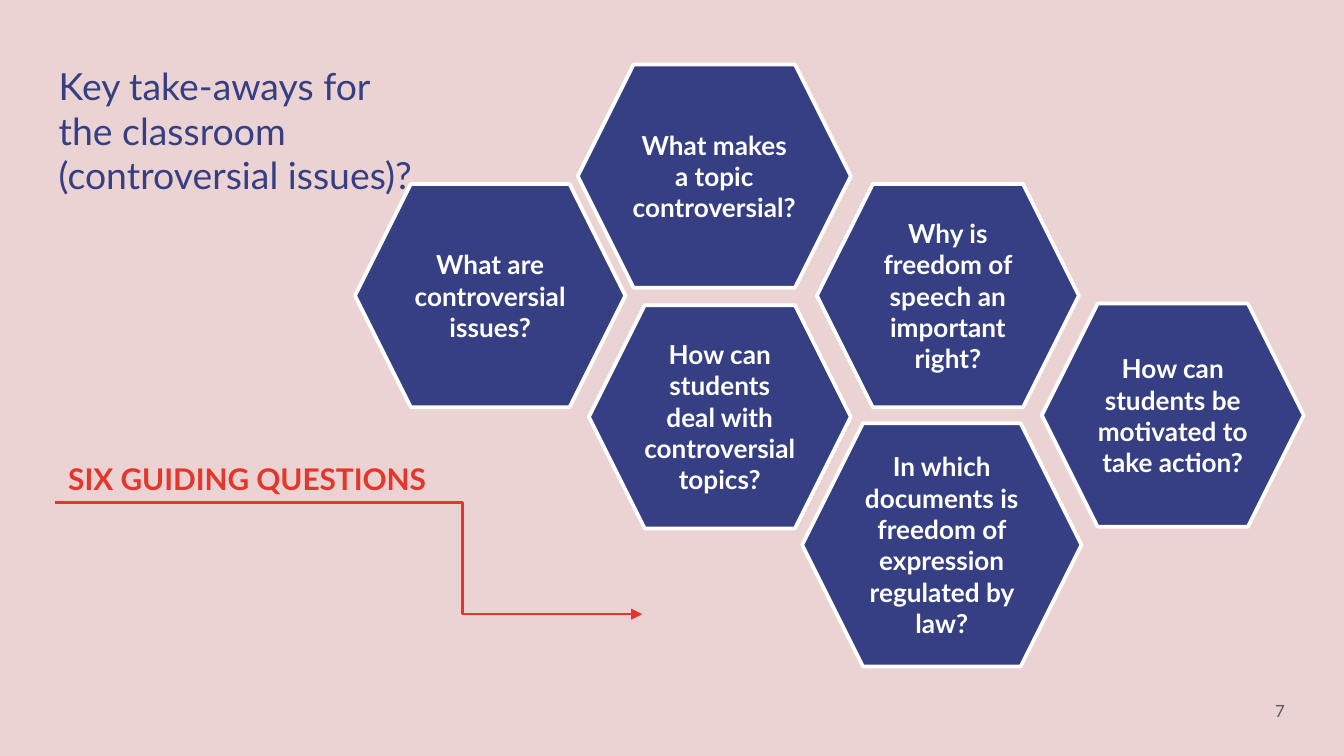
from lxml.etree import SubElement
from pptx import Presentation
from pptx.dml.color import RGBColor
from pptx.enum.shapes import MSO_CONNECTOR, MSO_SHAPE
from pptx.enum.text import MSO_ANCHOR, PP_ALIGN
from pptx.oxml.ns import qn
from pptx.util import Cm, Pt

# Content
COLORS = {"background": "EBD3D3", "navy": "363F83", "red": "E5362B",
          "white": "FFFFFF", "gray": "595959"}
FONT = "Lato"
TITLE = ["Key take-aways for", "the classroom", "(controversial issues)?"]
SUBTITLE = ["SIX GUIDING QUESTIONS"]
PAGE_NUMBER = ["7"]

# Question, then left, top, width and height in cm
TALL = 4.22
QUESTIONS = [
    ("What makes a topic controversial?", 10.92, 1.22, 5.16, TALL),
    ("What are controversial issues?", 6.71, 3.48, 5.11, TALL),
    ("How can students deal with controversial topics?", 11.13, 5.77, 4.95, TALL),
    ("Why is freedom of speech an important right?", 15.44, 3.48, 4.95, TALL),
    ("In which documents is freedom of expression regulated by law?",
     15.16, 8, 5.28, 4.6),
    ("How can students be motivated to take action?", 19.69, 5.74, 4.95, TALL),
]
ARROW = (1.04, 9.5, 12.14, 11.61)
ARROW_BEND = 0.694


def color(name):
    return RGBColor.from_string(COLORS[name])


def write(shape, lines, size, color_name, bold=False, align=PP_ALIGN.LEFT,
          anchor=MSO_ANCHOR.TOP, inset=0.25):
    frame = shape.text_frame
    frame.word_wrap = True
    frame.vertical_anchor = anchor
    frame.margin_left = frame.margin_right = Cm(0.25)
    frame.margin_top = frame.margin_bottom = Cm(inset)
    paragraph = frame.paragraphs[0]
    paragraph.alignment = align
    for index, line in enumerate(lines):
        if index:
            paragraph.add_line_break()
        run = paragraph.add_run()
        run.text = line
        run.font.name = FONT
        run.font.size = Pt(size)
        run.font.bold = bold
        run.font.color.rgb = color(color_name)
    return paragraph


def add_text(slide, box, lines, size, color_name, **style):
    shape = slide.shapes.add_textbox(*map(Cm, box))
    return write(shape, lines, size, color_name, **style)


def add_hexagon(slide, question, *box):
    shape = slide.shapes.add_shape(MSO_SHAPE.HEXAGON, *map(Cm, box))
    shape.shadow.inherit = False
    shape.fill.solid()
    shape.fill.fore_color.rgb = color("navy")
    shape.line.color.rgb = color("white")
    shape.line.width = Pt(2)
    write(shape, [question], 14, "white", bold=True, align=PP_ALIGN.CENTER,
          anchor=MSO_ANCHOR.MIDDLE, inset=0.13)


def add_arrow(slide):
    connector = slide.shapes.add_connector(MSO_CONNECTOR.ELBOW, *map(Cm, ARROW))
    connector.line.color.rgb = color("red")
    connector.line.width = Pt(1.25)
    properties = connector._element.spPr
    # Bend position, arrowhead and no shadow
    geometry = properties.find(qn("a:prstGeom"))
    guides = geometry.find(qn("a:avLst"))
    if guides is None:
        guides = SubElement(geometry, qn("a:avLst"))
    SubElement(guides, qn("a:gd"), name="adj1",
               fmla=f"val {round(ARROW_BEND * 100000)}")
    SubElement(properties.find(qn("a:ln")), qn("a:tailEnd"), type="triangle")
    SubElement(properties, qn("a:effectLst"))


def main():
    presentation = Presentation()
    presentation.slide_width = Cm(25.4)
    presentation.slide_height = Cm(14.29)
    slide = presentation.slides.add_slide(presentation.slide_layouts[6])
    slide.background.fill.solid()
    slide.background.fill.fore_color.rgb = color("background")

    # Title, subtitle and page number
    add_text(slide, (0.86, 0.94, 18.9, 1.6), TITLE, 20, "navy")
    subtitle = add_text(slide, (1.04, 8.36, 9.88, 1.14), SUBTITLE, 16, "red",
                        bold=True)
    subtitle.line_spacing = 1.15
    add_text(slide, (23.01, 12.9, 1.52, 1.09), PAGE_NUMBER, 9, "gray",
             align=PP_ALIGN.RIGHT, anchor=MSO_ANCHOR.MIDDLE)

    # Arrow and question hexagons
    add_arrow(slide)
    for question in QUESTIONS:
        add_hexagon(slide, *question)

    presentation.save("out.pptx")


if __name__ == "__main__":
    main()
